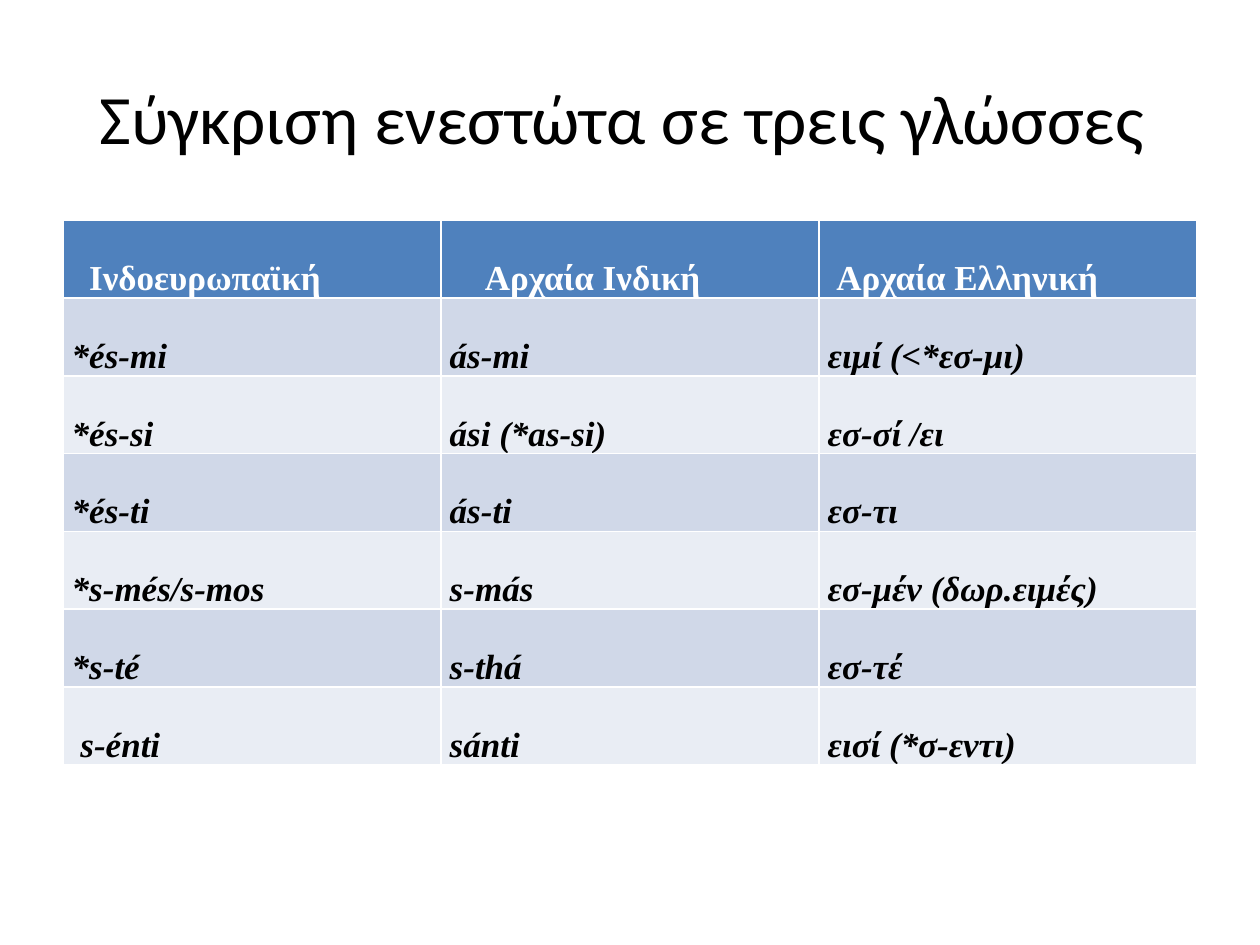
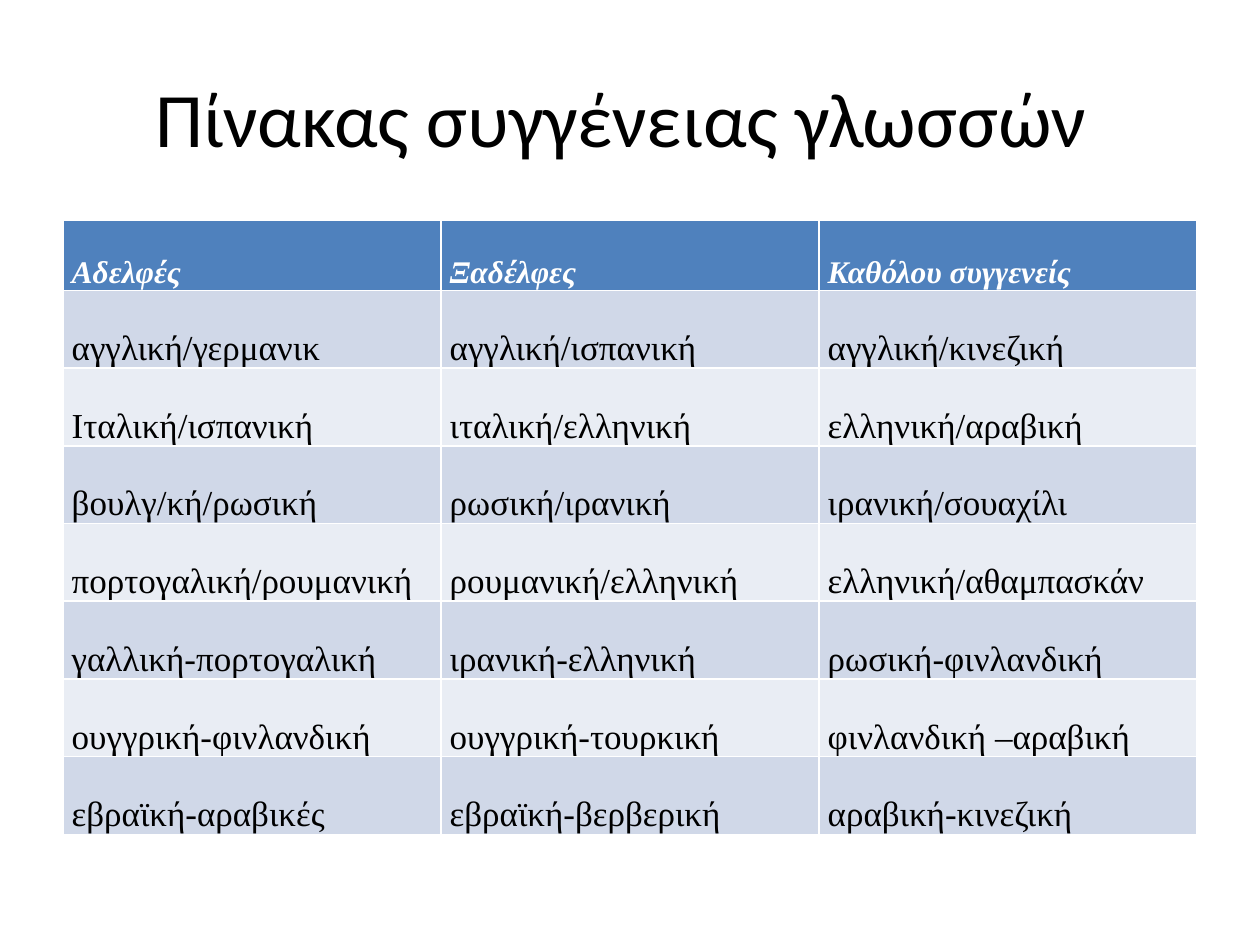
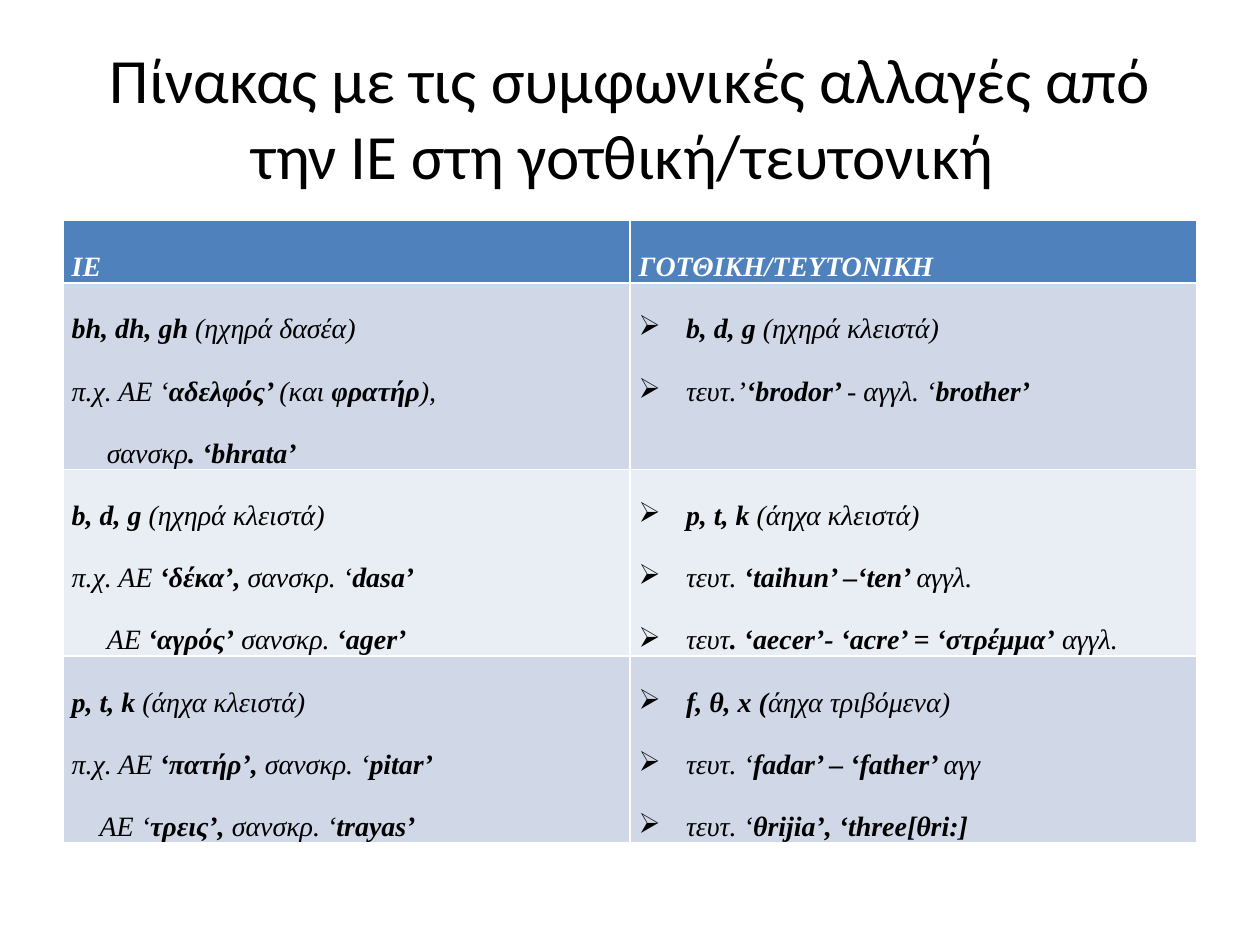
from typing import NamedTuple

from lxml.etree import SubElement
from pptx import Presentation
from pptx.dml.color import RGBColor
from pptx.enum.text import MSO_ANCHOR, MSO_AUTO_SIZE, PP_ALIGN
from pptx.oxml.ns import qn
from pptx.util import Pt

BLACK = RGBColor(0x00, 0x00, 0x00)
WHITE = RGBColor(0xFF, 0xFF, 0xFF)
HEADER_BLUE = RGBColor(0x4F, 0x81, 0xBD)
BANDS = (RGBColor(0xD0, 0xD8, 0xE8), RGBColor(0xE9, 0xED, 0xF4))

TITLE_FONT = "Calibri"
TABLE_FONT = "Times New Roman"
TITLE_ONLY_LAYOUT = 5

LEFT, WIDTH = 36, 648
TITLE_TOP, TITLE_HEIGHT = 21.6, 90
TABLE_TOP, MINIMUM_ROW_HEIGHT = 126, 29.5
CELL_INSET = 5
BULLET, BULLET_INDENT = "➢", 27


class Line(NamedTuple):
    """A paragraph; text between bars is bold."""
    text: str
    indent: float = 0
    bullet: bool = False


class Style(NamedTuple):
    size: float
    bold: bool
    italic: bool


def bulleted(*texts):
    return [Line(text, BULLET_INDENT, True) for text in texts]


SLIDES = [
    {
        "title": "Σύγκριση ενεστώτα σε τρεις γλώσσες ",
        "title_size": 39.6,
        "table_height": 336,
        "header_style": Style(20, True, False),
        "body_style": Style(20, True, True),
        "rows": [
            (Line("Ινδοευρωπαϊκή", 10), Line("Αρχαία Ινδική", 20), Line("Αρχαία Ελληνική", 5)),
            ("*és-mi", "ás-mi", "ειμί (<*εσ-μι)"),
            ("*és-si", "ási (*as-si)", "εσ-σί /ει"),
            ("*és-ti", "ás-ti", "εσ-τι"),
            ("*s-més/s-mos", "s-más", "εσ-μέν (δωρ.ειμές)"),
            ("*s-té", "s-thá", "εσ-τέ"),
            (Line("s-énti", 5), "sánti", "εισί (*σ-εντι)"),
        ],
    },
    {
        "title": "Πίνακας συγγένειας γλωσσών ",
        "title_size": 44,
        "table_height": 379.5,
        "header_style": Style(18, True, True),
        "body_style": Style(20, False, False),
        "rows": [
            ("Αδελφές", "Ξαδέλφες", "Καθόλου συγγενείς"),
            ("αγγλική/γερμανικ", "αγγλική/ισπανική", "αγγλική/κινεζική"),
            ("Ιταλική/ισπανική", "ιταλική/ελληνική", "ελληνική/αραβική"),
            ("βουλγ/κή/ρωσική", "ρωσική/ιρανική", "ιρανική/σουαχίλι"),
            ("πορτογαλική/ρουμανική", "ρουμανική/ελληνική", "ελληνική/αθαμπασκάν"),
            ("γαλλική-πορτογαλική", "ιρανική-ελληνική", "ρωσική-φινλανδική"),
            ("ουγγρική-φινλανδική", "ουγγρική-τουρκική", "φινλανδική –αραβική"),
            ("εβραϊκή-αραβικές", "εβραϊκή-βερβερική", "αραβική-κινεζική"),
        ],
    },
    {
        "title": "Πίνακας με τις συμφωνικές αλλαγές από την ΙΕ στη γοτθική/τευτονική ",
        "title_size": 36,
        "table_height": 384,
        "header_style": Style(16, True, True),
        "body_style": Style(16, False, True),
        "rows": [
            ("ΙΕ", "ΓΟΤΘΙΚΗ/ΤΕΥΤΟΝΙΚΗ"),
            (
                ["|bh, dh, gh| (ηχηρά δασέα)",
                 "π.χ. ΑΕ ‘|αδελφός’ |(και |φρατήρ|),",
                 Line("σανσκρ|. ‘bhrata’|", 20)],
                bulleted("|b, d, g| (ηχηρά κλειστά)",
                         "τευτ.’|‘brodor’ |- αγγλ. ‘|brother’|"),
            ),
            (
                ["|b, d, g| (ηχηρά κλειστά)",
                 "π.χ. ΑΕ |‘δέκα’,| σανσκρ. ‘|dasa’|",
                 Line("ΑΕ |‘αγρός’| σανσκρ.| ‘ager’|", 20)],
                bulleted("|p, t, k |(άηχα κλειστά)",
                         "τευτ. |‘taihun’ –‘ten’ |αγγλ.",
                         "τευτ|. ‘aecer’- ‘acre’ = ‘στρέμμα’| αγγλ."),
            ),
            (
                ["|p, t, k |(άηχα κλειστά)",
                 "π.χ. ΑΕ |‘πατήρ’, |σανσκρ. ‘|pitar’|",
                 Line("ΑΕ ‘|τρεις’, |σανσκρ. ‘|trayas’|", 16)],
                bulleted("|f, θ, x (|άηχα τριβόμενα)",
                         "τευτ. ‘|fadar’ – ‘father’ |αγγ",
                         "τευτ. ‘|θrijia’, ‘three[θri:]|"),
            ),
        ],
    },
]


def as_lines(content):
    """Turn a string, a Line or a list of either into a list of Lines."""
    items = content if isinstance(content, list) else [content]
    return [Line(item) if isinstance(item, str) else item for item in items]


def write_title(slide, text, size):
    title = slide.shapes.title
    title.left, title.top = Pt(LEFT), Pt(TITLE_TOP)
    title.width, title.height = Pt(WIDTH), Pt(TITLE_HEIGHT)
    frame = title.text_frame
    frame.text = text
    frame.auto_size = MSO_AUTO_SIZE.NONE
    frame.vertical_anchor = MSO_ANCHOR.MIDDLE
    paragraph = frame.paragraphs[0]
    paragraph.alignment = PP_ALIGN.CENTER
    paragraph.font.name = TITLE_FONT
    paragraph.font.size = Pt(size)
    paragraph.font.color.rgb = BLACK


def write_line(paragraph, line, style, color):
    properties = paragraph._p.get_or_add_pPr()
    if line.indent:
        properties.set("marL", str(Pt(line.indent)))
    if line.bullet:
        properties.set("indent", str(-Pt(line.indent)))
        SubElement(properties, qn("a:buChar")).set("char", BULLET)
    paragraph.alignment = PP_ALIGN.JUSTIFY
    paragraph.line_spacing = 2.0
    font = paragraph.font
    font.name, font.size = TABLE_FONT, Pt(style.size)
    font.italic = style.italic
    font.color.rgb = color
    for index, text in enumerate(line.text.split("|")):
        if text:
            run = paragraph.add_run()
            run.text = text
            run.font.bold = style.bold or index % 2 == 1


def write_cell(cell, content, style, color, fill):
    cell.fill.solid()
    cell.fill.fore_color.rgb = fill
    cell.margin_left = cell.margin_right = Pt(CELL_INSET)
    cell.margin_top = cell.margin_bottom = 0
    frame = cell.text_frame
    for index, line in enumerate(as_lines(content)):
        paragraph = frame.add_paragraph() if index else frame.paragraphs[0]
        write_line(paragraph, line, style, color)


def add_language_table(slide, content):
    rows = content["rows"]
    column_count = len(rows[0])
    graphic_frame = slide.shapes.add_table(
        len(rows), column_count, Pt(LEFT), Pt(TABLE_TOP), Pt(WIDTH), Pt(content["table_height"]))
    table = graphic_frame.table
    for column in table.columns:
        column.width = Pt(WIDTH / column_count)
    for row_index, row in enumerate(rows):
        table.rows[row_index].height = Pt(MINIMUM_ROW_HEIGHT)
        if row_index == 0:
            look = content["header_style"], WHITE, HEADER_BLUE
        else:
            look = content["body_style"], BLACK, BANDS[(row_index - 1) % 2]
        for column_index, cell_content in enumerate(row):
            write_cell(table.cell(row_index, column_index), cell_content, *look)
    graphic_frame.height = Pt(content["table_height"])


def main():
    presentation = Presentation()
    presentation.slide_width, presentation.slide_height = Pt(720), Pt(540)
    for content in SLIDES:
        slide = presentation.slides.add_slide(presentation.slide_layouts[TITLE_ONLY_LAYOUT])
        write_title(slide, content["title"], content["title_size"])
        add_language_table(slide, content)
    presentation.save("out.pptx")


if __name__ == "__main__":
    main()
